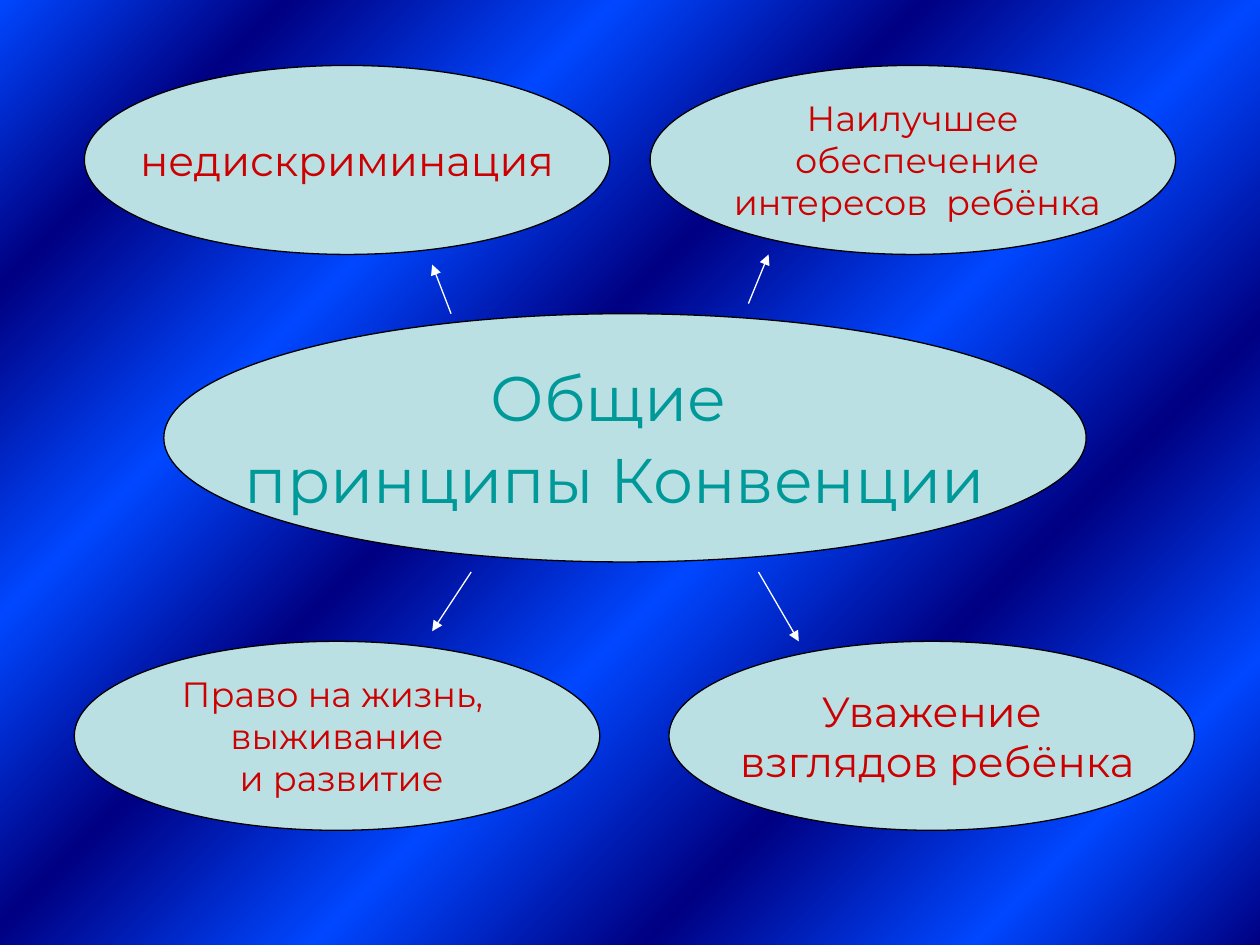
import pptx
import pptx.util
import pptx.dml.color
import pptx.enum.shapes
import pptx.enum.text
import pptx.oxml
import pptx.oxml.ns
from lxml import etree

RGB = pptx.dml.color.RGBColor
PALE = RGB(0xBB, 0xE0, 0xE3)
TEAL = RGB(0x00, 0x99, 0x99)
RED = RGB(0xCC, 0x00, 0x00)
WHITE = RGB(0xFF, 0xFF, 0xFF)
BLACK = RGB(0x00, 0x00, 0x00)
BRIGHT = RGB(0x00, 0x47, 0xFF)
NAVY = RGB(0x00, 0x00, 0x82)
FONT = "Montserrat"

# Content; places and sizes are percent of the slide's width and height
CENTRE = ["Общие  ", "принципы Конвенции"]
TOP, LOW = 6.93, 67.87
SIZE = (41.7, 20)
IDEAS = [
    (6.7, TOP, 24, ["недискриминация"]),
    (51.6, TOP, 20, ["Наилучшее", " обеспечение", " интересов  ребёнка"]),
    (5.9, LOW, 20, ["Право на жизнь, ", "выживание", " и развитие"]),
    (53.1, LOW, 24, ["Уважение", " взглядов ребёнка"]),
]
ARROWS = [
    (35.8, 33.2, 34.3, 28),
    (59.4, 32.13, 61, 26.93),
    (37.4, 60.53, 34.3, 66.8),
    (60.2, 60.53, 63.4, LOW),
]
STOPS = [0, 13, 28, 42, 57, 72, 87, 100]

deck = pptx.Presentation()
deck.slide_width = pptx.util.Inches(10)
deck.slide_height = pptx.util.Inches(7.5)
slide = deck.slides.add_slide(deck.slide_layouts[6])


def scale(x, y):
    return round(deck.slide_width * x / 100), round(deck.slide_height * y / 100)


def add_run(para, text, size, color, bold=False):
    run = para.add_run()
    run.text = text
    run.font.name = FONT
    run.font.size = pptx.util.Pt(size)
    run.font.bold = bold
    run.font.color.rgb = color


def add_oval(lines, at, span, size, color):
    oval = slide.shapes.add_shape(
        pptx.enum.shapes.MSO_SHAPE.OVAL, *scale(*at), *scale(*span))
    oval.shadow.inherit = False
    oval.fill.solid()
    oval.fill.fore_color.rgb = PALE
    oval.line.color.rgb = BLACK
    oval.line.width = pptx.util.Pt(0.75)
    frame = oval.text_frame
    frame.word_wrap = False
    frame.vertical_anchor = pptx.enum.text.MSO_ANCHOR.MIDDLE
    for i, line in enumerate(lines):
        para = frame.add_paragraph() if i else frame.paragraphs[0]
        para.alignment = pptx.enum.text.PP_ALIGN.CENTER
        add_run(para, line, size, color)
    return oval


def add_arrow(x1, y1, x2, y2):
    arrow = slide.shapes.add_connector(
        pptx.enum.shapes.MSO_CONNECTOR.STRAIGHT, *scale(x1, y1), *scale(x2, y2))
    arrow.line.color.rgb = WHITE
    arrow.line.width = pptx.util.Pt(0.75)
    qn = pptx.oxml.ns.qn
    etree.SubElement(arrow.line._get_or_add_ln(), qn("a:tailEnd"), type="triangle")
    etree.SubElement(arrow._element.spPr, qn("a:effectLst"))


# Striped diagonal background
fill = slide.background.fill
fill.gradient()
stops = "".join(
    f'<a:gs pos="{pos * 1000}"><a:srgbClr val="{(BRIGHT, NAVY)[i % 2]}"/></a:gs>'
    for i, pos in enumerate(STOPS))
grad = pptx.oxml.parse_xml(
    f'<a:gradFill {pptx.oxml.ns.nsdecls("a")} rotWithShape="1">'
    f'<a:gsLst>{stops}</a:gsLst><a:lin ang="2700000" scaled="1"/></a:gradFill>')
old = slide._element.find(".//" + pptx.oxml.ns.qn("a:gradFill"))
old.getparent().replace(old, grad)

# Central oval, whose last line ends in a larger space
hub = add_oval(CENTRE, (13, 33.2), (73.2, 26.27), 36, TEAL)
add_run(hub.text_frame.paragraphs[-1], " ", 40, WHITE, bold=True)

# Four principles around it
for x, y, size, lines in IDEAS:
    add_oval(lines, (x, y), SIZE, size, RED)

# Arrows outward
for ends in ARROWS:
    add_arrow(*ends)

deck.save("out.pptx")
